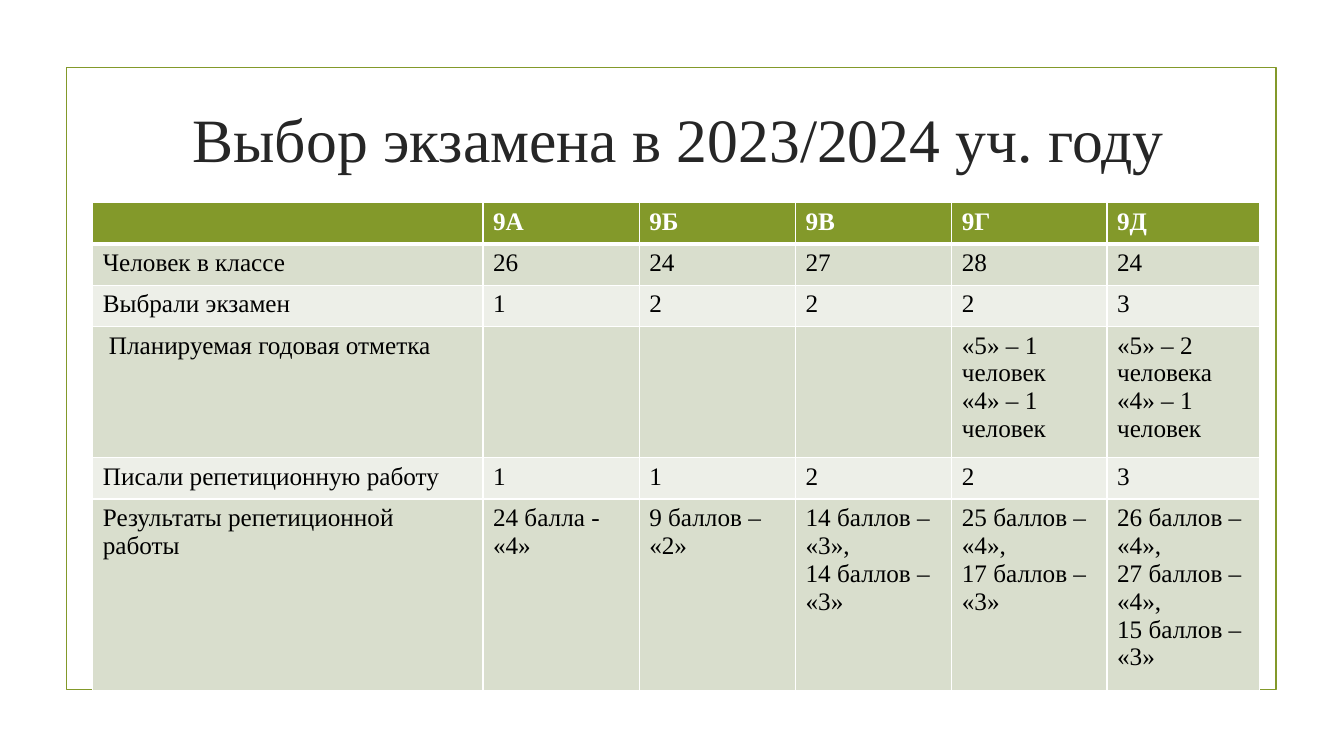
import pptx
import pptx.dml.color
import pptx.enum.shapes
import pptx.enum.text
import pptx.oxml.ns
import pptx.util
from lxml import etree

RGBColor = pptx.dml.color.RGBColor
Inches = pptx.util.Inches
Pt = pptx.util.Pt

OLIVE = RGBColor(0x83, 0x99, 0x2A)
DARK_BAND = RGBColor(0xD9, 0xDE, 0xCD)
LIGHT_BAND = RGBColor(0xED, 0xEF, 0xE8)
TITLE_GREY = RGBColor(0x26, 0x26, 0x26)
WHITE = RGBColor(0xFF, 0xFF, 0xFF)
BLACK = RGBColor(0, 0, 0)
FONT = "Times New Roman"

COLUMN_WIDTHS = [3.87, 1.55, 1.55, 1.55, 1.54, 1.51]
ROW_HEIGHTS = [0.41, 0.41, 0.41, 1.21, 0.41, 1.75]
PLANNED_MARK_ROW = 3
EXAM_ROWS = [
    ["", "9А", "9Б", "9В", "9Г", "9Д"],
    ["Человек в классе", "26", "24", "27", "28", "24"],
    ["Выбрали экзамен", "1", "2", "2", "2", "3"],
    ["Планируемая годовая отметка", "", "", "",
     "«5» – 1 человек\n«4» – 1 человек",
     "«5» – 2 человека\n«4» – 1 человек"],
    ["Писали репетиционную работу", "1", "1", "2", "2", "3"],
    ["Результаты репетиционной работы", "24 балла - «4»", "9 баллов – «2»",
     "14 баллов – «3»,\n14 баллов – «3»",
     "25 баллов – «4»,\n17 баллов – «3»",
     "26 баллов – «4»,\n27 баллов – «4»,\n15 баллов – «3»"],
]


def format_text(frame, size, color, bold=False):
    for para in frame.paragraphs:
        for span in para.runs:
            span.font.name = FONT
            span.font.size = Pt(size)
            span.font.bold = bold
            span.font.color.rgb = color


def add_frame(page, left, top, width, height):
    frame = page.shapes.add_shape(
        pptx.enum.shapes.MSO_SHAPE.RECTANGLE,
        Inches(left), Inches(top), Inches(width), Inches(height))
    frame.shadow.inherit = False
    frame.fill.background()
    frame.line.color.rgb = OLIVE
    frame.line.width = Pt(1.25)


def add_title(page, left, top, width, height):
    box = page.shapes.add_textbox(
        Inches(left), Inches(top), Inches(width), Inches(height))
    frame = box.text_frame
    frame.word_wrap = True
    frame.vertical_anchor = pptx.enum.text.MSO_ANCHOR.MIDDLE
    frame.text = "Выбор экзамена в 2023/2024 уч. году"
    frame.paragraphs[0].alignment = pptx.enum.text.PP_ALIGN.CENTER
    format_text(frame, 44, TITLE_GREY)


def add_borders(cell, top, bottom):
    """Draw white cell edges; the side edges are 1 pt wide."""
    properties = cell._tc.get_or_add_tcPr()
    for side, width in (("L", 1), ("R", 1), ("T", top), ("B", bottom)):
        edge = etree.SubElement(
            properties, pptx.oxml.ns.qn("a:ln" + side), w=str(Pt(width)))
        fill = etree.SubElement(edge, pptx.oxml.ns.qn("a:solidFill"))
        etree.SubElement(fill, pptx.oxml.ns.qn("a:srgbClr"), val=str(WHITE))


def add_exam_table(page, left, top):
    table = page.shapes.add_table(
        len(ROW_HEIGHTS), len(COLUMN_WIDTHS), Inches(left), Inches(top),
        Inches(sum(COLUMN_WIDTHS)), Inches(sum(ROW_HEIGHTS))).table
    for column, width in zip(table.columns, COLUMN_WIDTHS):
        column.width = Inches(width)
    for row, height in zip(table.rows, ROW_HEIGHTS):
        row.height = Inches(height)
    for row_index, texts in enumerate(EXAM_ROWS):
        header = row_index == 0
        band = OLIVE if header else DARK_BAND if row_index % 2 else LIGHT_BAND
        for column_index, text in enumerate(texts):
            cell = table.cell(row_index, column_index)
            add_borders(cell, 3 if row_index == 1 else 1, 3 if header else 1)
            cell.fill.solid()
            cell.fill.fore_color.rgb = band
            cell.text_frame.text = text
            format_text(cell.text_frame, 18, WHITE if header else BLACK, header)
    table.cell(PLANNED_MARK_ROW, 0).margin_left = Inches(0.16)


def main():
    deck = pptx.Presentation()
    deck.slide_width = Inches(13.33)
    deck.slide_height = Inches(7.5)
    page = deck.slides.add_slide(deck.slide_layouts[6])
    add_frame(page, 0.66, 0.67, 12, 6.17)
    add_title(page, 1.48, 0.65, 10.5, 1.43)
    add_exam_table(page, 0.92, 2.01)
    deck.save("out.pptx")


if __name__ == "__main__":
    main()
